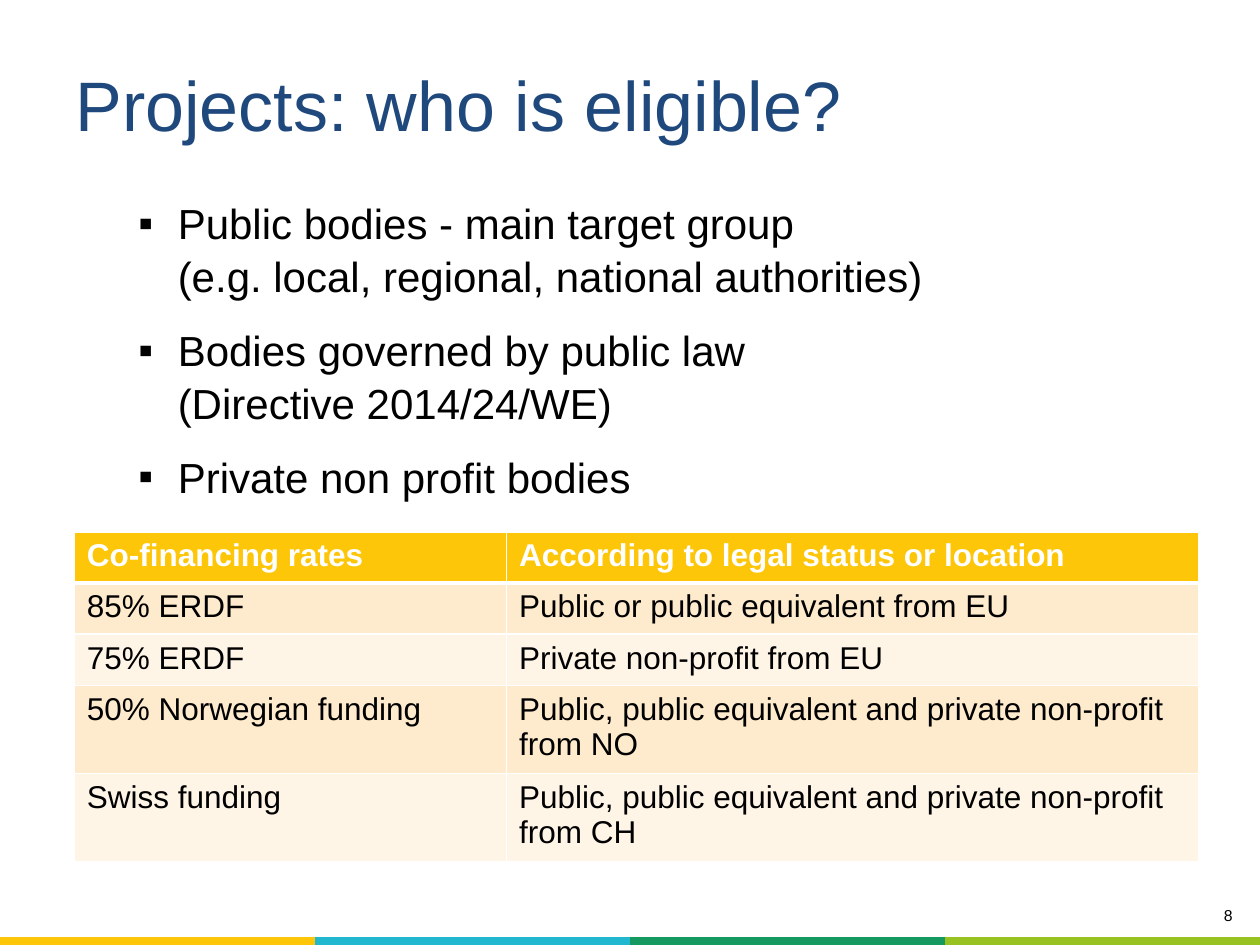
from lxml.etree import SubElement as Sub
from pptx import Presentation
from pptx.dml.color import RGBColor as RGB
from pptx.enum.text import MSO_ANCHOR as Anchor, MSO_AUTO_SIZE as Auto, PP_ALIGN as Align
from pptx.oxml import parse_xml
from pptx.oxml.ns import nsdecls, qn
from pptx.util import Pt

# Content
TITLE = "Projects: who is eligible?"
WHO = [
    "Public bodies - main target group\v(e.g. local, regional, national authorities)",
    "Bodies governed by public law \v(Directive 2014/24/WE)",
    "Private non profit bodies",
]
RATES = [
    ("Co-financing rates", "According to legal status or location"),
    ("85% ERDF", "Public or public equivalent from EU"),
    ("75% ERDF", "Private non-profit from EU"),
    ("50% Norwegian funding", "Public, public equivalent and private non-profit from NO"),
    ("Swiss funding", "Public, public equivalent and private non-profit from CH"),
]
PAGE = "8"

# Look
HUE = {"text": "000000", "title": "1F497D", "white": "FFFFFF", "head": "FDC609",
       "odd": "FEEACC", "even": "FFF5E7"}
STRIP = ["FDC609", "21B7CF", "159960", "98C222"]
WIDE, HIGH = 720, 540
COLS = [247, 395.3]
ROW = 29.2
BAND = 4.32


def style(par, size, hue="text", bold=False, **form):
    for key, val in form.items():
        setattr(par, key, val)
    for run in par.runs:
        font = run.font
        for key, val in {"name": "Arial", "size": Pt(size), "bold": bold}.items():
            setattr(font, key, val)
        font.color.rgb = RGB.from_string(HUE[hue])


def fill(cell, code):
    cell.fill.solid()
    cell.fill.fore_color.rgb = RGB.from_string(code)


def edge(cell, **wide):
    """Set the four cell borders; a width of 0 hides one."""
    prop = cell._tc.get_or_add_tcPr()
    for i, side in enumerate("LRTB"):
        w = wide.get(side, wide["all"])
        paint = (f'<a:solidFill><a:srgbClr val="{HUE["white"]}"/></a:solidFill>'
                 if w else "<a:noFill/>")
        prop.insert(i, parse_xml(
            f'<a:ln{side} {nsdecls("a")} w="{Pt(w)}">{paint}</a:ln{side}>'))


def grid(slide, rows, cols, box):
    table = slide.shapes.add_table(rows, cols, *map(Pt, box)).table
    table.first_row = table.horz_banding = False
    return table


def label(slide, box):
    frame = slide.shapes.add_textbox(*map(Pt, box)).text_frame
    frame.word_wrap = True
    return frame


def main():
    deck = Presentation()
    deck.slide_width, deck.slide_height = Pt(WIDE), Pt(HIGH)
    slide = deck.slides.add_slide(deck.slide_layouts[5])

    # Colour strip along the foot
    strip = grid(slide, 1, len(STRIP), (0, HIGH - BAND, WIDE, BAND))
    for cell, code in zip(strip.rows[0].cells, STRIP):
        for side in ("left", "right", "top", "bottom"):
            setattr(cell, f"margin_{side}", 0)
        end = cell.text_frame.paragraphs[0]._p
        Sub(end, qn("a:endParaRPr"), sz="100")
        edge(cell, all=0)
        fill(cell, code)

    # Page number
    frame = label(slide, (569.5, 514, 142, 22))
    frame.text = PAGE
    style(frame.paragraphs[0], 9, alignment=Align.RIGHT)

    # Title
    title = slide.shapes.title
    box = dict(left=36, top=33.84, width=648, height=43.92)
    for key, val in box.items():
        setattr(title, key, Pt(val))
    frame = title.text_frame
    form = dict(text=TITLE, auto_size=Auto.NONE, word_wrap=True,
                vertical_anchor=Anchor.MIDDLE, margin_top=Pt(6.6), margin_bottom=0)
    for key, val in form.items():
        setattr(frame, key, val)
    style(frame.paragraphs[0], 40, "title", alignment=Align.LEFT)

    # Bullets
    frame = label(slide, (36, 108, 646.5, 408))
    for i, text in enumerate(WHO):
        par = frame.add_paragraph() if i else frame.paragraphs[0]
        par.text = text
        prop = par._p.get_or_add_pPr()
        prop.set("marL", str(Pt(58.5)))
        prop.set("indent", str(Pt(-22.5)))
        Sub(prop, qn("a:buFont"), typeface="Arial")
        Sub(prop, qn("a:buChar"), char="▪")
        style(par, 24, level=1, line_spacing=1.05, space_before=Pt(12 if i else 0))

    # Rates table
    table = grid(slide, len(RATES), len(COLS), (42.5, 304, sum(COLS), ROW * len(RATES)))
    for col, wide in zip(table.columns, COLS):
        col.width = Pt(wide)
    for r, row in enumerate(RATES):
        head = r == 0
        shade = "head" if head else "odd" if r % 2 else "even"
        for c, text in enumerate(row):
            cell = table.cell(r, c)
            cell.text = text
            style(cell.text_frame.paragraphs[0], 18, "white" if head else "text", head)
            edge(cell, all=1, T=3 if r == 1 else 1, B=3 if head else 1)
            fill(cell, HUE[shade])

    deck.save("out.pptx")


if __name__ == "__main__":
    main()
